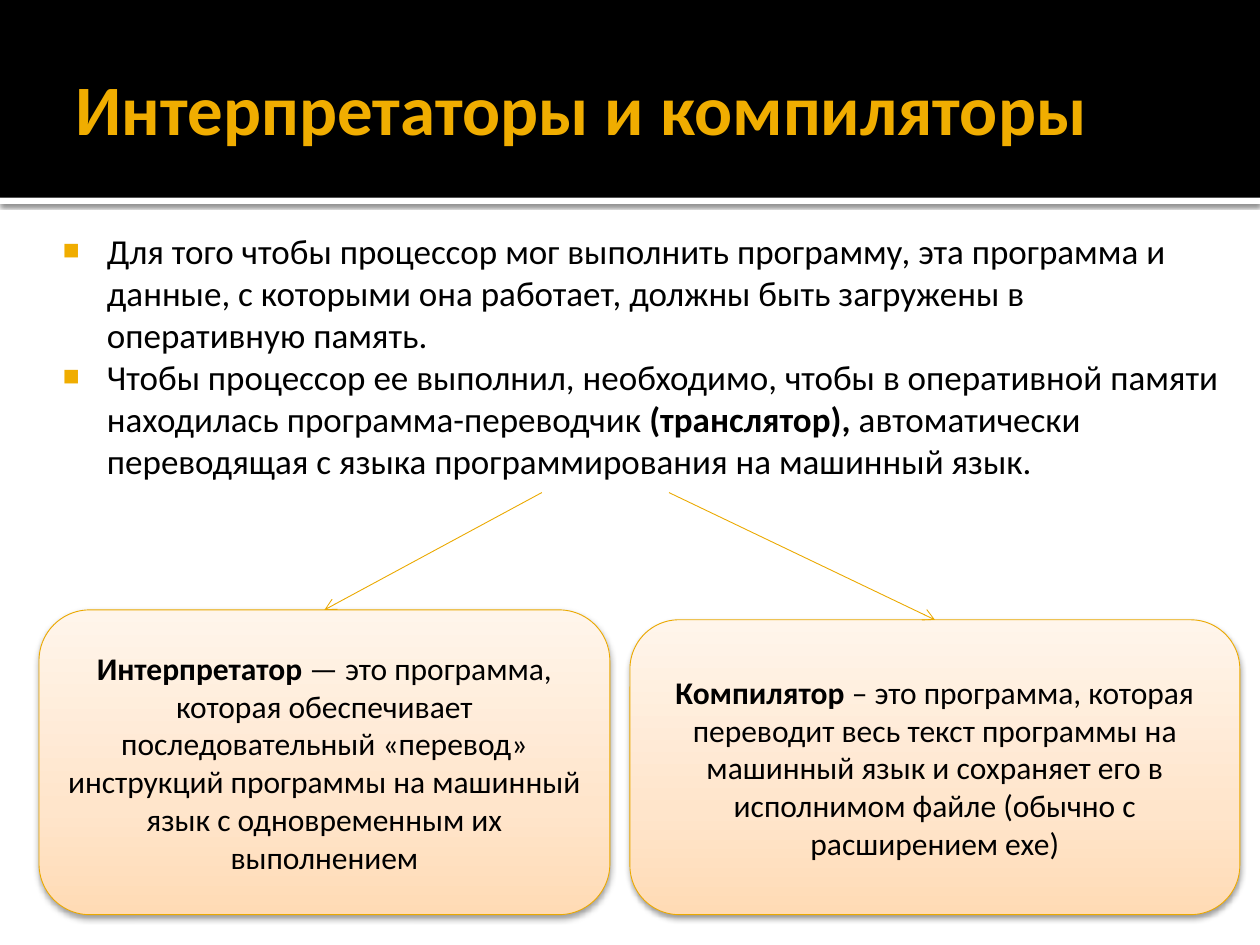
from lxml import etree
from pptx import Presentation
from pptx import util as u
from pptx.dml.color import RGBColor
from pptx.enum import shapes, text
from pptx.oxml import parse_xml
from pptx.oxml.ns import nsdecls, qn

BLACK = RGBColor(0x00, 0x00, 0x00)
WHITE = RGBColor(0xFF, 0xFF, 0xFF)
AMBER = RGBColor(0xF0, 0xAD, 0x00)
OUTLINE = RGBColor(0xEB, 0xA9, 0x00)
GRADIENT = [
    (0, RGBColor(0xFF, 0xDB, 0xB5)),
    (35, RGBColor(0xFF, 0xE5, 0xCB)),
    (100, RGBColor(0xFF, 0xF5, 0xEB)),
]
FONT = "Calibri"

TITLE = "Интерпретаторы и компиляторы"
BULLETS = [
    [("Для того чтобы процессор мог выполнить программу, эта программа и данные, "
      "с которыми она работает, должны быть загружены в оперативную память.", False)],
    [("Чтобы процессор ее выполнил, необходимо, чтобы в оперативной памяти "
      "находилась программа-переводчик ", False),
     ("(транслятор), ", True),
     ("автоматически переводящая с языка программирования на машинный язык.", False)],
]
CARDS = [
    {"frame": (22.3, 348.5, 326.2, 174.2), "arrow_start": (309.6, 281.5),
     "spans": [("Интерпретатор", True),
               (" — это программа, которая обеспечивает последовательный «перевод» "
                "инструкций программы на машинный язык с одновременным их "
                "выполнением", False)]},
    {"frame": (360, 354.2, 348.5, 168.5), "arrow_start": (382.3, 281.5),
     "spans": [("Компилятор ", True),
               ("– это программа, которая переводит весь текст программы на машинный "
                "язык и сохраняет его в исполнимом файле (обычно с расширением "
                "ехе)", False)]},
]


def points(values):
    return [u.Pt(value) for value in values]


def place(box, frame):
    box.left, box.top, box.width, box.height = points(frame)


def set_insets(frame, left, top, right, bottom):
    frame.margin_left, frame.margin_top = u.Pt(left), u.Pt(top)
    frame.margin_right, frame.margin_bottom = u.Pt(right), u.Pt(bottom)


def write(para, spans, size):
    para.font.name, para.font.size = FONT, u.Pt(size)
    para.font.color.rgb = BLACK
    for words, bold in spans:
        span = para.add_run()
        span.text = words
        if bold:
            span.font.bold = True


def add_shadow(shape, opacity, blur, distance):
    shape.shadow.inherit = False
    effects = shape._element.spPr.find(qn("a:effectLst"))
    effects.append(parse_xml(
        f'<a:outerShdw {nsdecls("a")} blurRad="{u.Pt(blur)}" dist="{u.Pt(distance)}" '
        f'dir="5400000" rotWithShape="0"><a:srgbClr val="{BLACK}">'
        f'<a:alpha val="{opacity * 1000}"/></a:srgbClr></a:outerShdw>'))


def fill_gradient(shape):
    shape.fill.gradient()
    shape.fill.gradient_angle = 90
    stops = shape._element.spPr.find(qn("a:gradFill")).find(qn("a:gsLst"))
    for stop in list(stops):
        stops.remove(stop)
    for position, color in GRADIENT:
        stop = etree.SubElement(stops, qn("a:gs"), pos=str(position * 1000))
        etree.SubElement(stop, qn("a:srgbClr"), val=str(color))


def add_band(page, layer, frame, color):
    band = page.shapes.add_shape(shapes.MSO_SHAPE.RECTANGLE, *points(frame))
    band.fill.solid()
    band.fill.fore_color.rgb = color
    band.line.fill.background()
    band.shadow.inherit = False
    page.shapes._spTree.insert(layer, band._element)
    return band


def add_bullet(para):
    props = para._p.get_or_add_pPr()
    props.set("marL", str(u.Pt(34.5)))
    props.set("indent", str(u.Pt(-25.2)))
    color = etree.SubElement(props, qn("a:buClr"))
    etree.SubElement(color, qn("a:srgbClr"), val=str(AMBER))
    etree.SubElement(props, qn("a:buSzPct"), val="80000")
    etree.SubElement(props, qn("a:buFont"), typeface="Arial")
    etree.SubElement(props, qn("a:buChar"), char="■")


def add_heading(page):
    title = page.shapes.title
    place(title, (36, 12.2, 648, 98.6))
    frame = title.text_frame
    frame.auto_size = text.MSO_AUTO_SIZE.NONE
    frame.vertical_anchor = text.MSO_ANCHOR.MIDDLE
    set_insets(frame, 7.2, 3.6, 3.6, 3.6)
    para = frame.paragraphs[0]
    para.alignment = text.PP_ALIGN.LEFT
    write(para, [(TITLE, False)], 40.5)
    para.font.bold = True
    para.font.color.rgb = AMBER


def add_body(page):
    body = page.placeholders[1]
    place(body, (22.3, 123.8, 686.2, 230.4))
    frame = body.text_frame
    frame.auto_size = text.MSO_AUTO_SIZE.NONE
    set_insets(frame, 4.3, 7.2, 7.2, 3.6)
    for index, spans in enumerate(BULLETS):
        para = frame.add_paragraph() if index else frame.paragraphs[0]
        para.space_before = u.Pt(0)
        add_bullet(para)
        write(para, spans, 20)


def add_card(page, card):
    box = page.shapes.add_shape(shapes.MSO_SHAPE.ROUNDED_RECTANGLE, *points(card["frame"]))
    fill_gradient(box)
    box.line.color.rgb = OUTLINE
    box.line.width = u.Pt(0.5)
    add_shadow(box, 38, 3.5, 2)
    frame = box.text_frame
    frame.word_wrap = True
    frame.vertical_anchor = text.MSO_ANCHOR.MIDDLE
    para = frame.paragraphs[0]
    para.alignment = text.PP_ALIGN.CENTER
    write(para, card["spans"], 18)


def add_arrow(page, card):
    left, top, width, _ = card["frame"]
    arrow = page.shapes.add_connector(
        shapes.MSO_CONNECTOR.STRAIGHT, *points((*card["arrow_start"], left + width / 2, top)))
    arrow.line.color.rgb = OUTLINE
    arrow.line.width = u.Pt(0.5)
    etree.SubElement(arrow.line._get_or_add_ln(), qn("a:tailEnd"), type="arrow")
    etree.SubElement(arrow._element.spPr, qn("a:effectLst"))


def main():
    deck = Presentation()
    deck.slide_width, deck.slide_height = points((720, 540))
    page = deck.slides.add_slide(deck.slide_layouts[1])
    rule = add_band(page, 2, (0, 113, 720, 3.6), WHITE)
    add_shadow(rule, 60, 2.5, 0.8)
    add_band(page, 3, (0, 0, 720, 113), BLACK)
    add_heading(page)
    add_body(page)
    for card in CARDS:
        add_card(page, card)
    for card in CARDS:
        add_arrow(page, card)
    deck.save("out.pptx")


if __name__ == "__main__":
    main()
